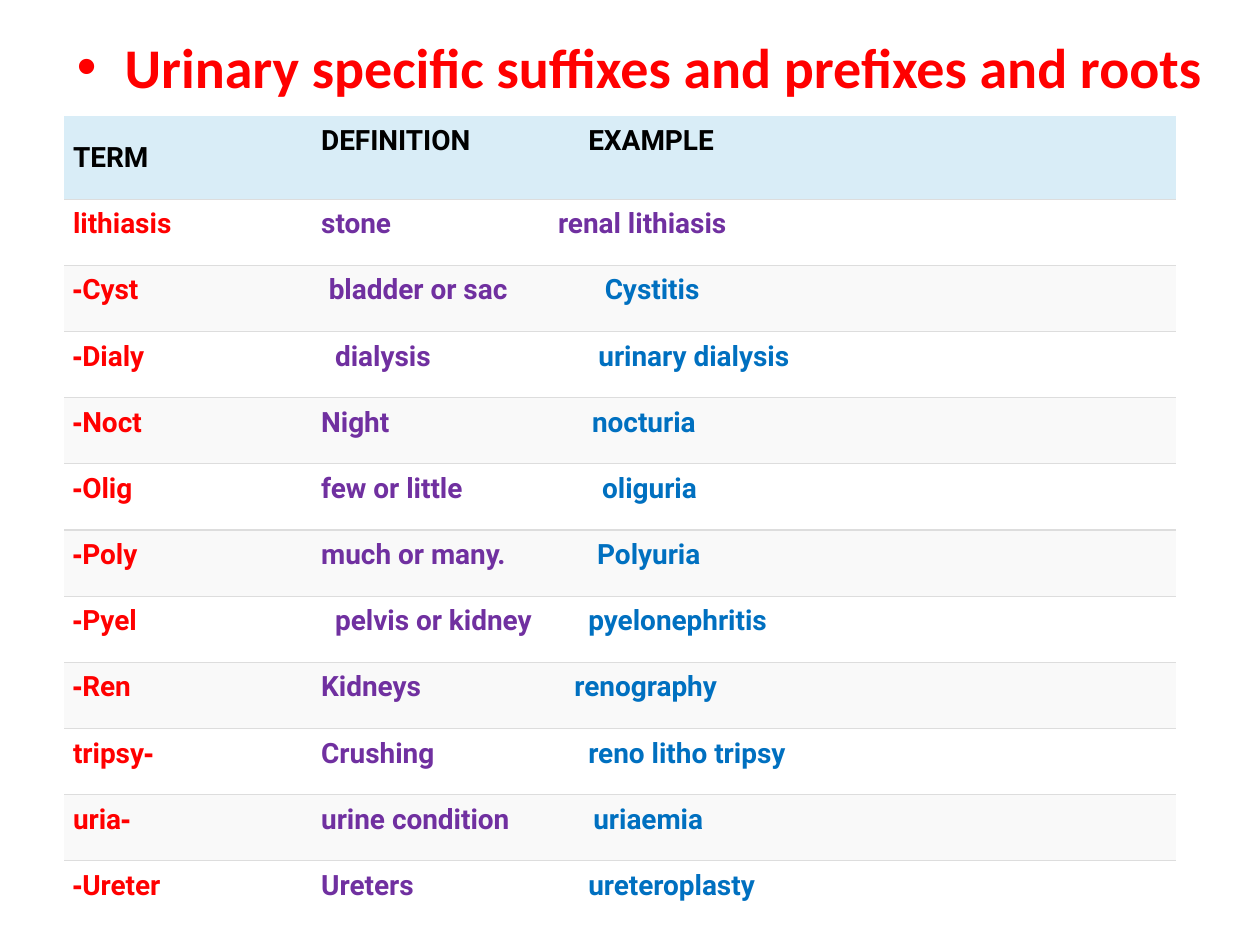
from lxml import etree
from pptx import Presentation
from pptx import util as u
from pptx.dml.color import RGBColor
from pptx.enum import text
from pptx.oxml import ns

RED = RGBColor(0xFF, 0x00, 0x00)
BLACK = RGBColor(0x00, 0x00, 0x00)
PURPLE = RGBColor(0x70, 0x30, 0xA0)
BLUE = RGBColor(0x00, 0x70, 0xC0)
WHITE = RGBColor(0xFF, 0xFF, 0xFF)
PALE_GRAY = RGBColor(0xF9, 0xF9, 0xF9)
PALE_BLUE = RGBColor(0xD9, 0xED, 0xF7)
RULE_GRAY = RGBColor(0xDD, 0xDD, 0xDD)
PLAIN_TABLE = "{2D5ABB26-0587-4C30-8999-92F81FD0307C}"

LEFT = 0.51
CELL_MARGIN = 0.07
HEADER_HEIGHT = 0.66
BODY_HEIGHT = 5.78

TERMS = [
    ("lithiasis", "stone", 0, "renal lithiasis", 1.88),
    ("Cyst-", "bladder or sac", 0.06, "Cystitis", 2.25),
    ("Dialy-", "dialysis", 0.11, "urinary dialysis", 2.2),
    ("Noct-", "Night", 0, "nocturia", 2.15),
    ("Olig-", "few or little", 0, "oliguria", 2.23),
    ("Poly-", "much or many.", 0, "Polyuria", 2.19),
    ("Pyel-", "pelvis or kidney", 0.11, "pyelonephritis", 2.12),
    ("Ren-", "Kidneys", 0, "renography", 2.01),
    ("-tripsy", "Crushing", 0, "reno litho tripsy", 2.12),
    ("-uria", "urine condition", 0, "uriaemia", 2.16),
    ("Ureter-", "Ureters", 0, "ureteroplasty", 2.12),
]


def add_element(parent, tag, **attributes):
    element = etree.SubElement(parent, ns.qn(tag))
    for name, value in attributes.items():
        element.set(name, str(value))
    return element


class TermPage:
    def __init__(self, deck):
        self.page = deck.slides.add_slide(deck.slide_layouts[5])
        self.title_font = "Calibri"
        self.table_font = "Roboto"

    def style(self, font, name, size, color=None):
        font.name = name
        font.size = u.Pt(size)
        font.bold = True
        if color is not None:
            font.color.rgb = color

    def title(self, wording):
        box = self.page.shapes.title
        box.left, box.top = u.Inches(LEFT), u.Inches(0.21)
        box.width, box.height = u.Inches(9.29), u.Inches(0.7)
        frame = box.text_frame
        frame.text = wording
        frame.auto_size = text.MSO_AUTO_SIZE.NONE
        frame.vertical_anchor = text.MSO_ANCHOR.TOP
        para = frame.paragraphs[0]
        para.alignment = text.PP_ALIGN.LEFT
        properties = para._p.get_or_add_pPr()
        properties.set("marL", str(u.Inches(0.38)))
        properties.set("indent", str(u.Inches(-0.38)))
        add_element(properties, "a:buFont", typeface="Arial")
        add_element(properties, "a:buChar", char="•")
        self.style(para.font, self.title_font, 32, RED)

    def table(self, rows, column_widths, row_heights):
        frame = self.page.shapes.add_table(
            rows, len(column_widths), u.Inches(LEFT), u.Inches(0.92),
            u.Inches(sum(column_widths)), u.Inches(sum(row_heights)))
        table = frame.table
        table._tbl.tblPr.find(ns.qn("a:tableStyleId")).text = PLAIN_TABLE
        for column, width in zip(table.columns, column_widths):
            column.width = u.Inches(width)
        for row, height in zip(table.rows, row_heights):
            row.height = u.Inches(height)
        return table

    def cell(self, cell, fill, ruled, anchor=text.MSO_ANCHOR.TOP):
        cell.margin_left = cell.margin_right = u.Inches(CELL_MARGIN)
        cell.margin_top = cell.margin_bottom = u.Inches(CELL_MARGIN)
        cell.vertical_anchor = anchor
        if ruled:
            line = add_element(cell._tc.get_or_add_tcPr(), "a:lnB", w=u.Pt(0.75))
            solid = add_element(line, "a:solidFill")
            add_element(solid, "a:srgbClr", val=RULE_GRAY)
        cell.fill.solid()
        cell.fill.fore_color.rgb = fill
        para = cell.text_frame.paragraphs[0]
        para.alignment = text.PP_ALIGN.LEFT
        return para

    def term(self, cell, fill, ruled, wording, color, anchor=text.MSO_ANCHOR.TOP):
        para = self.cell(cell, fill, ruled, anchor)
        para._p.get_or_add_pPr().set("rtl", "1")
        para.add_run().text = wording
        self.style(para.font, self.table_font, 16, color)

    def meaning(self, cell, fill, ruled, definition, indent, example, stop, colors):
        para = self.cell(cell, fill, ruled)
        cell.margin_left = u.Inches(CELL_MARGIN + indent)
        position = u.Inches(stop - indent)
        properties = para._p.get_or_add_pPr()
        properties.set("defTabSz", str(position))
        tabs = add_element(properties, "a:tabLst")
        add_element(tabs, "a:tab", pos=position, algn="l")
        self.style(para.font, self.table_font, 16)
        for wording, color in zip((definition + "\t", example), colors):
            span = para.add_run()
            span.text = wording
            span.font.color.rgb = color


def main():
    deck = Presentation()
    deck.slide_width, deck.slide_height = u.Inches(10), u.Inches(7.5)
    page = TermPage(deck)
    page.title("Urinary specific suffixes and prefixes and roots")

    heights = [HEADER_HEIGHT] + [BODY_HEIGHT / len(TERMS)] * len(TERMS)
    table = page.table(len(heights), [1.97, 6.85], heights)
    page.term(table.cell(0, 0), PALE_BLUE, True, "TERM", BLACK,
              text.MSO_ANCHOR.MIDDLE)
    page.meaning(table.cell(0, 1), PALE_BLUE, True,
                 "DEFINITION", 0, "EXAMPLE", 2.12, (BLACK, BLACK))

    for row, (term, *meaning) in enumerate(TERMS, 1):
        fill = WHITE if row % 2 else PALE_GRAY
        ruled = row < len(TERMS)
        colors = (PURPLE, PURPLE if row == 1 else BLUE)
        page.term(table.cell(row, 0), fill, ruled, term, RED)
        page.meaning(table.cell(row, 1), fill, ruled, *meaning, colors)

    deck.save("out.pptx")


if __name__ == "__main__":
    main()
